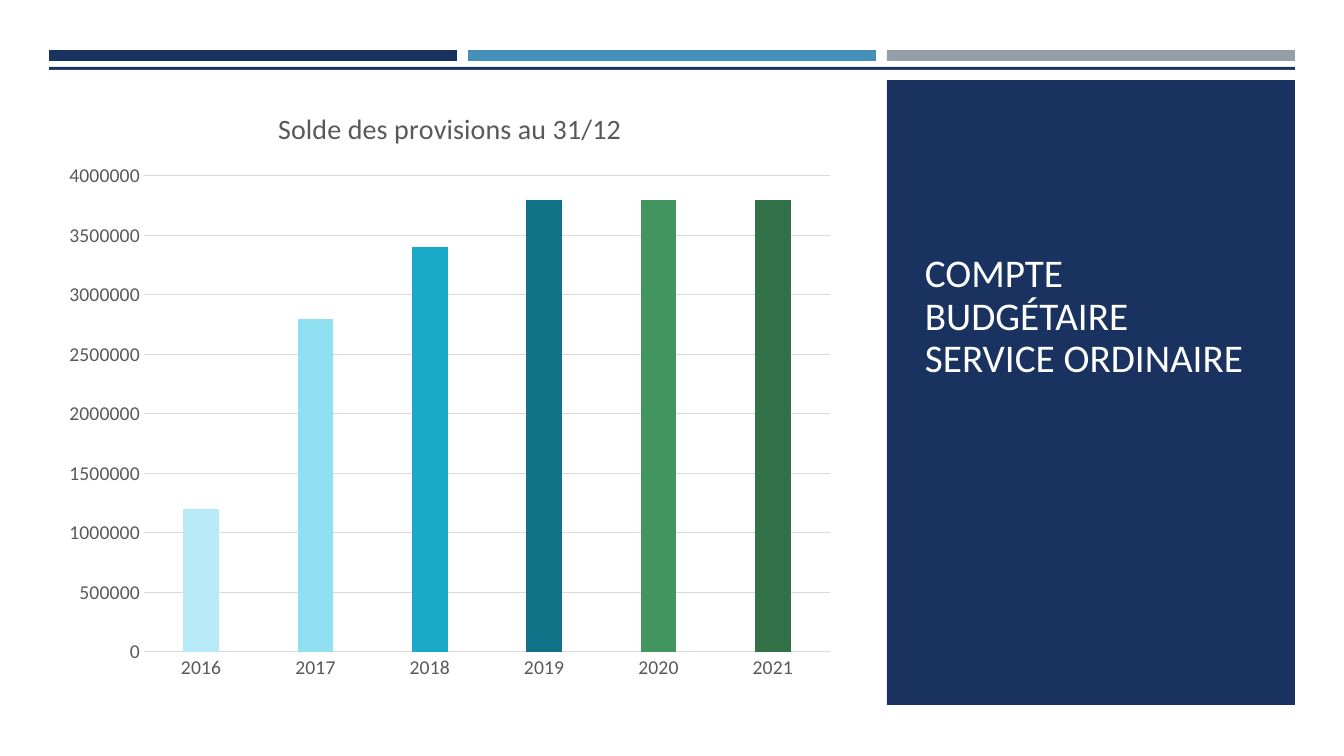
"""Build the slide showing the yearly balance of provisions."""
from lxml import etree
from pptx import Presentation
from pptx.chart.data import CategoryChartData
from pptx.dml.color import RGBColor
from pptx.enum.chart import XL_CHART_TYPE, XL_TICK_MARK
from pptx.enum.shapes import MSO_SHAPE
from pptx.enum.text import MSO_ANCHOR
from pptx.oxml.ns import qn
from pptx.util import Emu, Pt

RECTANGLE = MSO_SHAPE.RECTANGLE
COLUMNS = XL_CHART_TYPE.COLUMN_CLUSTERED
NO_TICK = XL_TICK_MARK.NONE
BOTTOM = MSO_ANCHOR.BOTTOM

FONT = "Calibri"
NAVY, WHITE, GREY, GRID = "1A3260", "FFFFFF", "595959", "D9D9D9"
HEADING = "COMPTE BUDGÉTAIRE SERVICE ORDINAIRE"
CHART_TITLE = "Solde des provisions au 31/12"
BALANCES = [
    ("2016", 1200000, "B5EAF6"),
    ("2017", 2800000, "8FE0F1"),
    ("2018", 3400000, "19AAC9"),
    ("2019", 3800000, "117186"),
    ("2020", 3800000, "42955F"),
    ("2021", 3800000, "327047"),
]
BAND_COLOURS = [NAVY, "4590B8", "969FA7"]

PAGE_WIDTH, PAGE_HEIGHT = 1344, 756
LEFT, BAND_WIDTH, BAND_STEP = 49, 408, 419
PANEL_LEFT = LEFT + 2 * BAND_STEP
SHEET_TOP = 70
CHART_BOX = (53, 90, 793, 603)
PLOT_BOX = (144, 176, 686, 476)
TITLE_BOX = (273, 104)


def px(length):
    return Emu(round(length * 914400 / 100.8))


def colour(code):
    return RGBColor.from_string(code)


def add_block(page, left, top, width, height, fill):
    block = page.shapes.add_shape(RECTANGLE, *map(px, (left, top, width, height)))
    block.shadow.inherit = False
    block.fill.solid()
    block.fill.fore_color.rgb = colour(fill)
    block.line.fill.background()


def style_font(font, size, code):
    font.name, font.size, font.bold = FONT, Pt(size), False
    font.color.rgb = colour(code)


def place(parent, index, box, inner=False):
    for old in parent.findall(qn("c:layout")):
        parent.remove(old)
    layout = etree.Element(qn("c:layout"))
    manual = etree.SubElement(layout, qn("c:manualLayout"))
    left, top, width, height = CHART_BOX
    shares = [(box[0] - left) / width, (box[1] - top) / height]
    settings = [("xMode", "edge"), ("yMode", "edge")]
    if inner:
        settings.insert(0, ("layoutTarget", "inner"))
        shares += [box[2] / width, box[3] / height]
    settings += [(key, f"{share:.4f}") for key, share in zip("xywh", shares)]
    for key, value in settings:
        etree.SubElement(manual, qn(f"c:{key}")).set("val", value)
    parent.insert(index, layout)


def add_balance_chart(page):
    years, values, colours = zip(*BALANCES)
    data = CategoryChartData()
    data.categories = years
    data.add_series("Series 1", values)
    chart = page.shapes.add_chart(COLUMNS, *map(px, CHART_BOX), data).chart
    style_font(chart.font, 14, GREY)
    chart.has_legend = False
    title = chart.chart_title
    title.text_frame.text = CHART_TITLE
    style_font(title.text_frame.paragraphs[0].runs[0].font, 20, GREY)
    place(title.element, 1, TITLE_BOX)
    place(chart.element.find(f".//{qn('c:plotArea')}"), 0, PLOT_BOX, True)

    plot = chart.plots[0]
    plot.vary_by_categories = False
    plot.gap_width, plot.overlap = 219, -27
    for index, code in enumerate(colours):
        fill = plot.series[0].points[index].format.fill
        fill.solid()
        fill.fore_color.rgb = colour(code)

    years_axis, values_axis = chart.category_axis, chart.value_axis
    for axis in (years_axis, values_axis):
        axis.major_tick_mark = axis.minor_tick_mark = NO_TICK
        style_font(axis.tick_labels.font, 14, GREY)
    values_axis.minimum_scale, values_axis.maximum_scale = 0, 4000000
    values_axis.major_unit = 500000
    values_axis.format.line.fill.background()
    for line in (years_axis.format.line, values_axis.major_gridlines.format.line):
        line.color.rgb = colour(GRID)
        line.width = Pt(0.75)


def add_heading(page):
    box = page.shapes.add_textbox(*map(px, (915, 156, 340, 230)))
    frame = box.text_frame
    frame.word_wrap = True
    frame.vertical_anchor = BOTTOM
    frame.text = HEADING
    para = frame.paragraphs[0]
    para.line_spacing = 0.9
    style_font(para.runs[0].font, 28, WHITE)


def main():
    deck = Presentation()
    deck.slide_width, deck.slide_height = px(PAGE_WIDTH), px(PAGE_HEIGHT)
    page = deck.slides.add_slide(deck.slide_layouts[6])
    add_block(page, LEFT, 67, 2 * BAND_STEP + BAND_WIDTH, 131, NAVY)
    for index, code in enumerate(BAND_COLOURS):
        add_block(page, LEFT + index * BAND_STEP, 50, BAND_WIDTH, 11, code)
    add_block(page, 0, SHEET_TOP, PAGE_WIDTH, PAGE_HEIGHT - SHEET_TOP, WHITE)
    add_block(page, PANEL_LEFT, 80, BAND_WIDTH, 625, NAVY)
    add_balance_chart(page)
    add_heading(page)
    deck.save("out.pptx")


if __name__ == "__main__":
    main()
